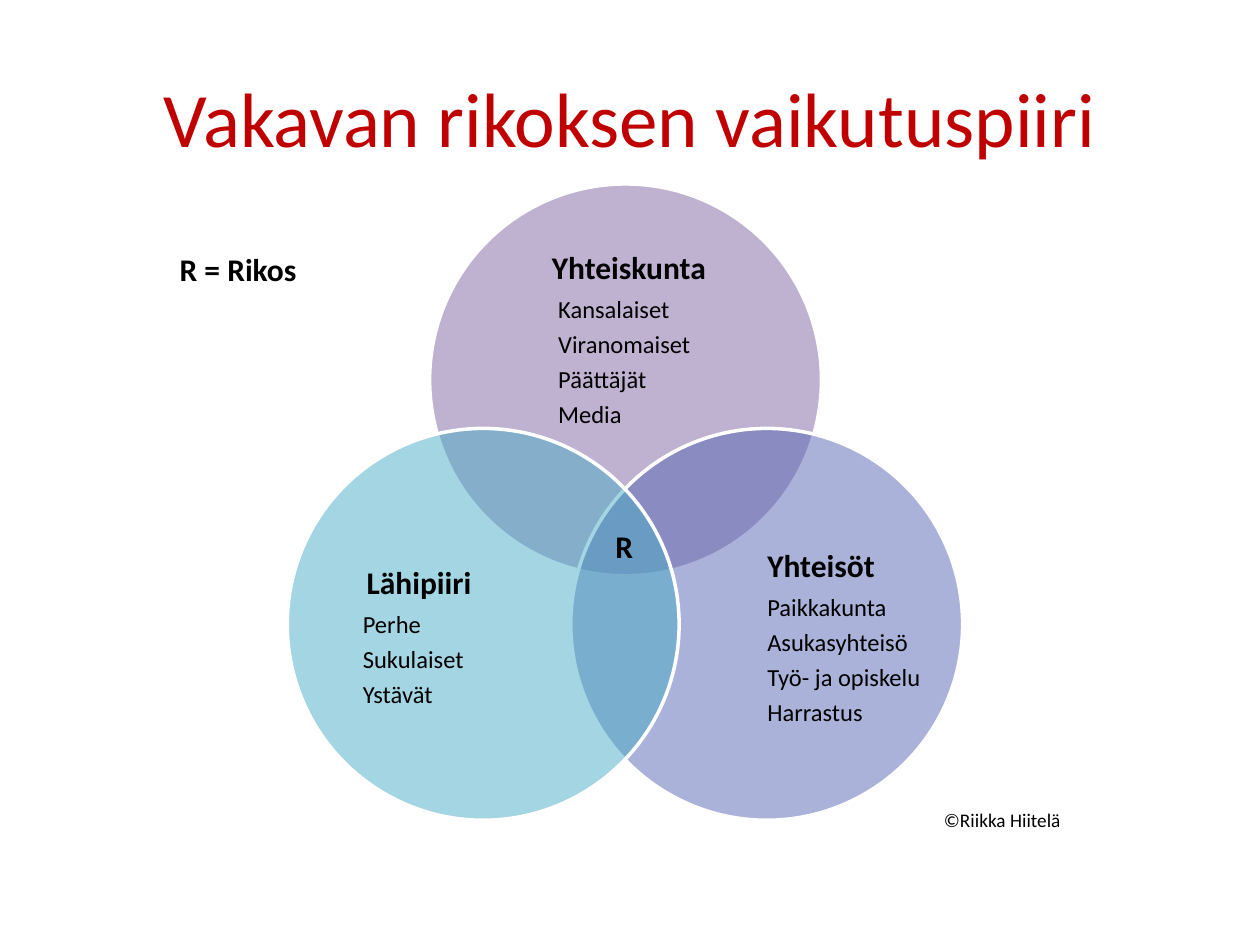
from dataclasses import dataclass

from lxml.etree import SubElement
from pptx import Presentation
from pptx.dml.color import RGBColor
from pptx.enum.shapes import MSO_SHAPE as Shape
from pptx.enum.text import MSO_ANCHOR as Anchor, PP_ALIGN as Align
from pptx.oxml.ns import qn
from pptx.util import Inches, Pt


@dataclass(frozen=True)
class Theme:
    font: str = "Calibri"
    title_color: str = "C00000"
    text_color: str = "000000"
    outline: str = "FFFFFF"
    society: str = "8064A2"
    communities: str = "5767B4"
    close_circle: str = "4BACC6"
    title_size: int = 44
    heading_size: int = 18
    item_size: int = 14
    credit_size: int = 11


TITLE_ONLY = 5
DIAMETER = 3.11


class SlideBuilder:
    def __init__(self, slide, theme):
        self.slide = slide
        self.theme = theme
        self.diagram = None

    def add_text(self, paragraph, text, size, color=None, bold=False):
        run = paragraph.add_run()
        run.text = text
        run.font.name = self.theme.font
        run.font.size = Pt(size)
        run.font.bold = bold
        run.font.color.rgb = RGBColor.from_string(color or self.theme.text_color)

    def title(self, text, box):
        shape = self.slide.shapes.title
        shape.left, shape.top, shape.width, shape.height = map(Inches, box)
        frame = shape.text_frame
        frame.vertical_anchor = Anchor.MIDDLE
        paragraph = frame.paragraphs[0]
        paragraph.alignment = Align.CENTER
        self.add_text(paragraph, text, self.theme.title_size, self.theme.title_color)

    def start_diagram(self):
        self.diagram = self.slide.shapes.add_group_shape()

    def circle(self, left, top, color):
        shape = self.diagram.shapes.add_shape(
            Shape.OVAL, *map(Inches, (left, top, DIAMETER, DIAMETER)))
        shape.shadow.inherit = False
        shape.fill.solid()
        shape.fill.fore_color.rgb = RGBColor.from_string(color)
        # Half transparent, so that overlaps show
        color_element = shape._element.spPr.find(qn("a:solidFill"))[0]
        SubElement(color_element, qn("a:alpha"), val="50000")
        shape.line.color.rgb = RGBColor.from_string(self.theme.outline)
        shape.line.width = Pt(2)

    def circle_text(self, box, heading, items, heading_indent, item_indent):
        shape = self.diagram.shapes.add_textbox(*map(Inches, box))
        frame = shape.text_frame
        frame.word_wrap = True
        frame.vertical_anchor = Anchor.MIDDLE
        frame.margin_left = frame.margin_right = 0
        frame.margin_top = frame.margin_bottom = 0
        for index, text in enumerate([heading, *items]):
            is_heading = index == 0
            paragraph = frame.paragraphs[0] if is_heading else frame.add_paragraph()
            size = self.theme.heading_size if is_heading else self.theme.item_size
            indent = heading_indent if is_heading else item_indent
            paragraph._p.get_or_add_pPr().set("marL", str(Inches(indent)))
            paragraph.line_spacing = 0.9
            paragraph.space_after = Pt(0.35 * size)
            self.add_text(paragraph, text, size, bold=is_heading)

    def label(self, text, box, size, bold=False):
        shape = self.slide.shapes.add_shape(
            Shape.ROUNDED_RECTANGLE, *map(Inches, box))
        shape.shadow.inherit = False
        shape.fill.background()
        shape.line.fill.background()
        frame = shape.text_frame
        frame.word_wrap = True
        frame.vertical_anchor = Anchor.MIDDLE
        paragraph = frame.paragraphs[0]
        paragraph.alignment = Align.CENTER
        self.add_text(paragraph, text, size, bold=bold)


def main():
    presentation = Presentation()
    presentation.slide_width = Inches(10)
    presentation.slide_height = Inches(7.5)
    slide = presentation.slides.add_slide(presentation.slide_layouts[TITLE_ONLY])
    theme = Theme()
    builder = SlideBuilder(slide, theme)

    builder.title("Vakavan rikoksen vaikutuspiiri", (0.5, 0.3, 9, 1.25))

    # Venn diagram: circle place and colour, text box, wording, indents
    circles = [
        (3.41, 1.46, theme.society, (3.82, 2, 2.28, 1.4), "Yhteiskunta",
         ["Kansalaiset", "Viranomaiset", "Päättäjät", "Media"], 0.56, 0.61),
        (4.53, 3.4, theme.communities, (5.48, 4.21, 1.87, 1.71), "Yhteisöt",
         ["Paikkakunta", "Asukasyhteisö", "Työ- ja opiskelu", "Harrastus"],
         0.61, 0.61),
        (2.28, 3.4, theme.close_circle, (2.58, 4.21, 1.87, 1.71), "Lähipiiri",
         ["Perhe", "Sukulaiset", "Ystävät"], 0.33, 0.3),
    ]
    builder.start_diagram()
    for left, top, color, *text in circles:
        builder.circle(left, top, color)
        builder.circle_text(*text)

    # Centre mark, credit and key
    builder.label("R", (4.76, 4.14, 0.39, 0.38), theme.heading_size, bold=True)
    builder.label("©Riikka Hiitelä", (7.05, 6.35, 1.81, 0.31), theme.credit_size)
    builder.label("R = Rikos", (0.67, 1.78, 2.44, 0.71), theme.heading_size, bold=True)

    presentation.save("out.pptx")


if __name__ == "__main__":
    main()
